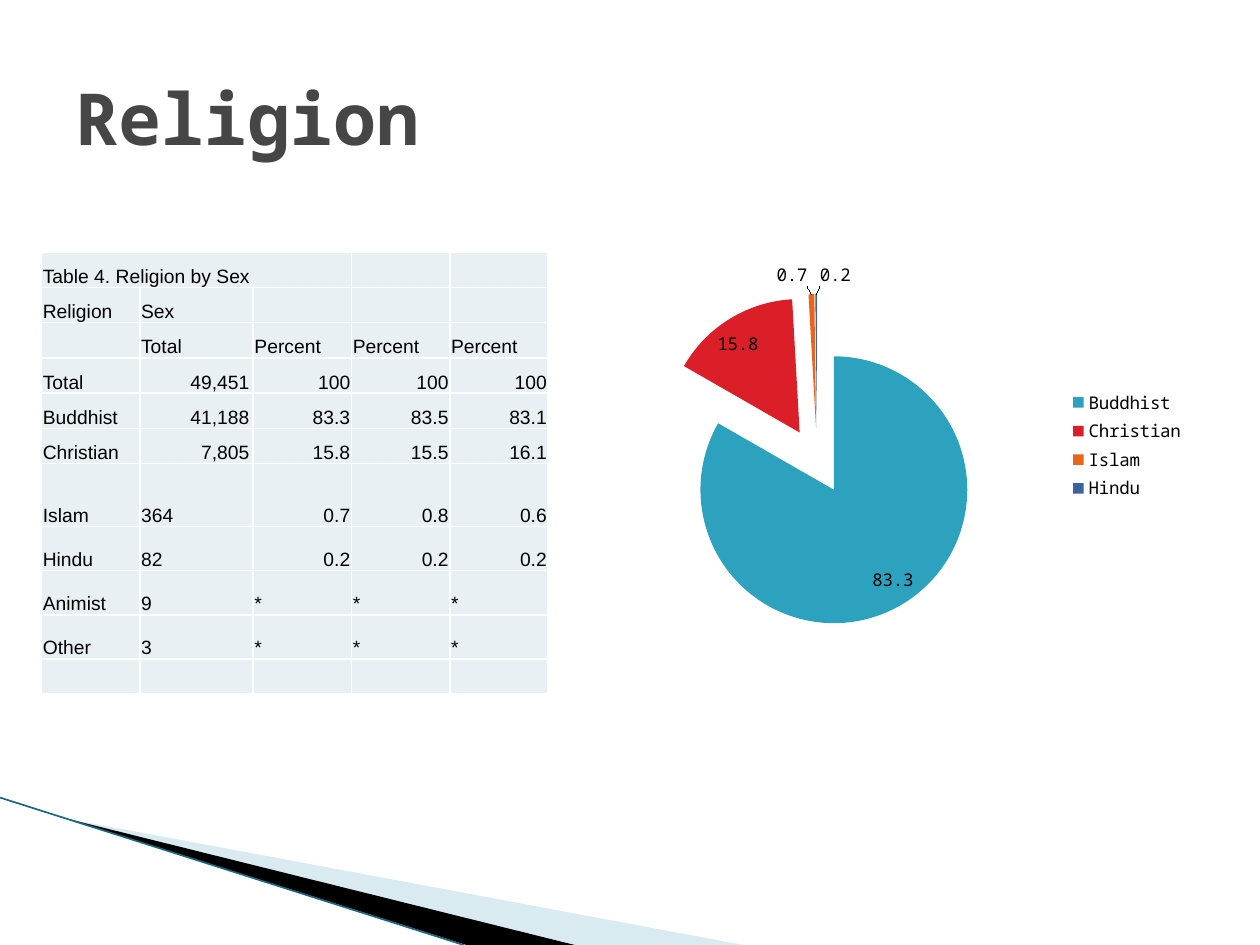
from lxml.etree import SubElement as Sub
from pptx import Presentation
from pptx.chart.data import CategoryChartData as Data
from pptx.dml.color import RGBColor as RGB
from pptx.enum.chart import XL_CHART_TYPE as Kind, XL_LABEL_POSITION as Spot, XL_LEGEND_POSITION as Side
from pptx.enum.shapes import MSO_CONNECTOR as Link
from pptx.enum.text import MSO_ANCHOR as Anchor, PP_ALIGN as Align
from pptx.oxml import parse_xml
from pptx.oxml.ns import nsdecls, qn
from pptx.util import Inches, Pt

WHITE = RGB(0xFF, 0xFF, 0xFF)
BLACK = RGB(0, 0, 0)
GRAY = RGB(0x46, 0x46, 0x46)
PALE = RGB(0xE8, 0xF0, 0xF4)
MIST = RGB(0xA0, 0xCB, 0xDC)
TEAL = RGB(0x16, 0x69, 0x7F)
SLICES = [RGB(0x2D, 0xA2, 0xBF), RGB(0xDA, 0x1F, 0x28),
          RGB(0xEB, 0x64, 0x1B), RGB(0x39, 0x63, 0x9D)]
MONO = "Noto Sans Mono"

ROWS = [
    ["Table 4. Religion by Sex", "", "", "", ""],
    ["Religion", "Sex", "", "", ""],
    ["", "Total", "Percent", "Percent", "Percent"],
    ["Total", "49,451", "100", "100", "100"],
    ["Buddhist", "41,188", "83.3", "83.5", "83.1"],
    ["Christian", "7,805", "15.8", "15.5", "16.1"],
    ["Islam", "364", "0.7", "0.8", "0.6"],
    ["Hindu", "82", "0.2", "0.2", "0.2"],
    ["Animist", "9", "*", "*", "*"],
    ["Other", "3", "*", "*", "*"],
    ["", "", "", "", ""],
]
WIDTHS = [0.78, 0.9, 0.78, 0.78, 0.78]
HEIGHTS = [0.28] * 6 + [0.5] + [0.35] * 3 + [0.28]
SHARES = {"Buddhist": 83.3, "Christian": 15.8, "Islam": 0.7, "Hindu": 0.2}


def set_font(font, name, size, color, bold=False):
    """Set the face, size, colour and weight of a font."""
    font.name, font.size, font.bold = name, Pt(size), bold
    font.color.rgb = color


def add_wedge(slide, points, color):
    """Draw a filled outline through points given in inches."""
    first, *rest = [(Inches(x), Inches(y)) for x, y in points]
    build = slide.shapes.build_freeform(*first)
    build.add_line_segments(rest)
    wedge = build.convert_to_shape()
    wedge.shadow.inherit = False
    wedge.fill.solid()
    wedge.fill.fore_color.rgb = color
    wedge.line.fill.background()
    return wedge


def add_sweep(slide, left, top, width, height):
    """Draw the wedges and the edge line in the bottom corner."""
    foot = top + height
    start = left + 0.54, top + 0.17
    pale = add_wedge(slide, [start, (left + width, foot), (left + 4.56, foot)], MIST)
    tint = pale.fill._xPr.find(".//" + qn("a:srgbClr"))
    Sub(tint, qn("a:alpha"), val="40000")
    add_wedge(slide, [start, (left + 4.56, foot), (left + 3.7, foot)], BLACK)
    edge = slide.shapes.add_connector(
        Link.STRAIGHT, Inches(left), Inches(top), Inches(left + 3.68), Inches(foot))
    edge.line.color.rgb = TEAL
    edge.line.width = Pt(0.95)
    Sub(edge._element.spPr, qn("a:effectLst"))


def add_title(slide, left, top, width, height):
    """Place and format the slide title."""
    title = slide.shapes.title
    title.left, title.top = Inches(left), Inches(top)
    title.width, title.height = Inches(width), Inches(height)
    frame = title.text_frame
    frame.text = "Religion"
    frame.vertical_anchor = Anchor.MIDDLE
    para = frame.paragraphs[0]
    para.alignment = Align.LEFT
    set_font(para.font, MONO, 41, GRAY, True)


def style_cell(cell, text, row, col):
    """Fill one cell, with white borders and numbers to the right."""
    props = cell._tc.get_or_add_tcPr()
    for side in "LRTB":
        props.append(parse_xml(
            f'<a:ln{side} {nsdecls("a")} w="12700"><a:solidFill>'
            f'<a:srgbClr val="{WHITE}"/></a:solidFill></a:ln{side}>'))
    cell.fill.solid()
    cell.fill.fore_color.rgb = PALE
    cell.vertical_anchor = Anchor.BOTTOM
    cell.margin_left = cell.margin_top = Inches(0.01)
    cell.margin_right = Inches(0.03 if col == 1 else 0.01)
    cell.margin_bottom = 0
    cell.text = text
    para = cell.text_frame.paragraphs[0]
    para.line_spacing = 0.93
    last = 5 if col == 1 else 7
    if col and 3 <= row <= last:
        para.alignment = Align.RIGHT
    set_font(para.font, "Arial", 11, BLACK)


def add_grid(slide, left, top):
    """Build the table of religion by sex."""
    grid = slide.shapes.add_table(
        len(ROWS), len(WIDTHS), Inches(left), Inches(top),
        Inches(sum(WIDTHS)), Inches(sum(HEIGHTS))).table
    grid.first_row = grid.horz_banding = False
    for col, width in zip(grid.columns, WIDTHS):
        col.width = Inches(width)
    for line, height in zip(grid.rows, HEIGHTS):
        line.height = Inches(height)
    for row, texts in enumerate(ROWS):
        for col, text in enumerate(texts):
            style_cell(grid.cell(row, col), text, row, col)
    grid.cell(0, 0).merge(grid.cell(0, 2))


def add_pie(slide, left, top, width, height):
    """Build the exploded pie of shares with its legend."""
    data = Data()
    data.categories = list(SHARES)
    data.add_series("Series 1", list(SHARES.values()))
    chart = slide.shapes.add_chart(
        Kind.PIE, Inches(left), Inches(top), Inches(width), Inches(height), data).chart
    set_font(chart.font, MONO, 10, BLACK)
    chart.has_title = False
    chart.has_legend = True
    chart.legend.position = Side.RIGHT
    chart.legend.include_in_layout = False
    plot = chart.plots[0]
    plot.vary_by_categories = True
    series = plot.series[0]
    for spot, color in enumerate(SLICES):
        fill = series.points[spot].format.fill
        fill.solid()
        fill.fore_color.rgb = color
    burst = parse_xml(f'<c:explosion {nsdecls("c")} val="25"/>')
    series._element.find(qn("c:dPt")).addprevious(burst)
    labels = series.data_labels
    labels.show_value = True
    labels.position = Spot.BEST_FIT


def main():
    """Build the slide and save it."""
    deck = Presentation()
    deck.slide_width, deck.slide_height = Inches(10), Inches(7.5)
    slide = deck.slides.add_slide(deck.slide_layouts[5])
    add_sweep(slide, 0, 6.33, 5.9, 1.17)
    add_title(slide, 0.5, 0.3, 9, 1.25)
    add_grid(slide, 0.33, 2)
    add_pie(slide, 4.5, 1.95, 5, 3.17)
    deck.save("out.pptx")


if __name__ == "__main__":
    main()
